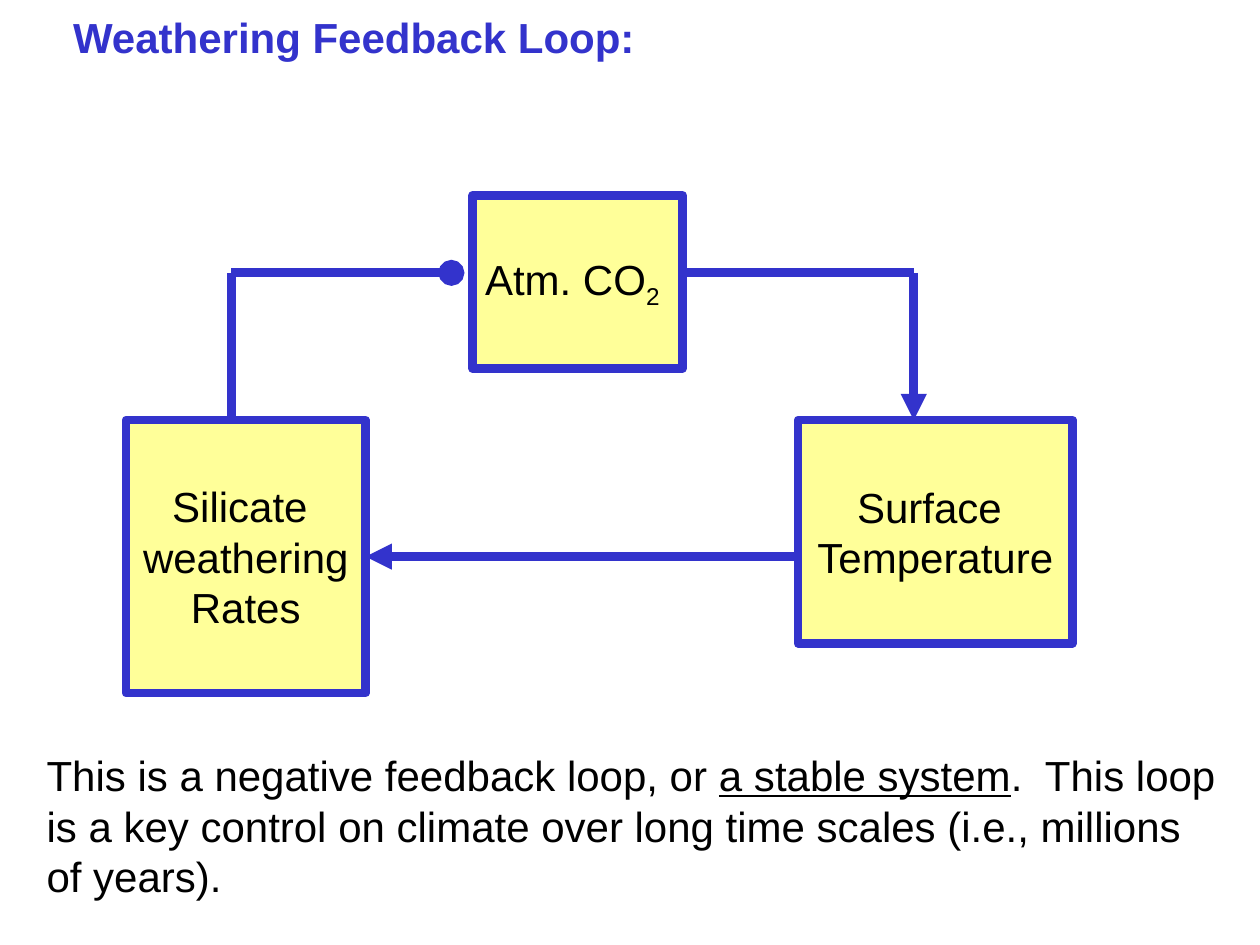
from dataclasses import dataclass

from lxml import etree
from pptx import Presentation
from pptx.dml.color import RGBColor
from pptx.enum.shapes import MSO_CONNECTOR, MSO_SHAPE
from pptx.enum.text import MSO_ANCHOR, MSO_AUTO_SIZE, PP_ALIGN
from pptx.oxml.ns import qn
from pptx.util import Cm, Pt

RECT = MSO_SHAPE.RECTANGLE
LINE = MSO_CONNECTOR.STRAIGHT
LEFT, CENTER = PP_ALIGN.LEFT, PP_ALIGN.CENTER
TOP, MIDDLE = MSO_ANCHOR.TOP, MSO_ANCHOR.MIDDLE
FIXED = MSO_AUTO_SIZE.NONE
RIGHT_SIDE = 3


@dataclass
class Theme:
    blue: RGBColor = RGBColor(0x33, 0x33, 0xCC)
    yellow: RGBColor = RGBColor(0xFF, 0xFF, 0x99)
    black: RGBColor = RGBColor(0, 0, 0)
    font: str = "Arial"
    size: Pt = Pt(24)
    stroke: Pt = Pt(5)


def write(frame, lines, theme, color=None, bold=False, align=LEFT, anchor=TOP):
    """Fill a frame; each line is a list of (text, style) runs."""
    frame.word_wrap = True
    frame.auto_size = FIXED
    frame.vertical_anchor = anchor
    for i, line in enumerate(lines):
        para = frame.add_paragraph() if i else frame.paragraphs[0]
        para.alignment = align
        for text, style in line:
            run = para.add_run()
            run.text = text
            font = run.font
            font.name, font.size, font.bold = theme.font, theme.size, bold
            font.color.rgb = color or theme.black
            if style == "under":
                font.underline = True
            elif style == "sub":
                font._element.set("baseline", "-25000")


class Page:
    def __init__(self, slide, theme):
        self.slide, self.theme = slide, theme

    def title(self, text, *area):
        shape = self.slide.shapes.title
        shape.left, shape.top, shape.width, shape.height = map(Cm, area)
        write(shape.text_frame, [[(text, "")]], self.theme,
              color=self.theme.blue, bold=True)

    def text(self, lines, *area):
        box = self.slide.shapes.add_textbox(*map(Cm, area))
        write(box.text_frame, lines, self.theme)

    def box(self, lines, *area, align=CENTER):
        shape = self.slide.shapes.add_shape(RECT, *map(Cm, area))
        shape.shadow.inherit = False
        shape.fill.solid()
        shape.fill.fore_color.rgb = self.theme.yellow
        shape.line.color.rgb = self.theme.blue
        shape.line.width = self.theme.stroke
        write(shape.text_frame, lines, self.theme, align=align, anchor=MIDDLE)
        return shape

    def link(self, *ends, tip=None):
        line = self.slide.shapes.add_connector(LINE, *map(Cm, ends))
        line.line.color.rgb = self.theme.blue
        line.line.width = self.theme.stroke
        if tip:
            etree.SubElement(line.line._get_or_add_ln(), qn("a:tailEnd"), type=tip)
        etree.SubElement(line._element.spPr, qn("a:effectLst"))
        return line


def main():
    deck = Presentation()
    deck.slide_width, deck.slide_height = Cm(25.4), Cm(19.05)
    page = Page(deck.slides.add_slide(deck.slide_layouts[5]), Theme())

    page.title("Weathering Feedback Loop:", 1.22, 0.1, 11.84, 1.27)

    # Stages of the loop
    page.box([[("Atm. CO", ""), ("2", "sub")]], 9.53, 3.94, 4.23, 3.49, align=LEFT)
    page.box([[("Surface ", "")], [("Temperature", "")]], 16.09, 8.47, 5.53, 4.5)
    rates = page.box([[("Silicate ", "")], [("weathering", "")], [("Rates", "")]],
                     2.54, 8.47, 4.83, 5.5)

    # Temperature drives weathering
    page.link(16.09, 11.22, 7.37, 11.22, tip="triangle").end_connect(rates, RIGHT_SIDE)

    # Weathering draws down the gas
    high, low = 5.5, 8.47
    page.link(4.66, low, 4.66, high)
    page.link(4.66, high, 9.1, high, tip="oval")

    # The gas warms the surface
    page.link(13.76, high, 18.42, high)
    page.link(18.42, high, 18.42, low, tip="triangle")

    # Conclusion
    page.text([[("This is a negative feedback loop, or ", ""),
                ("a stable system", "under"),
                (".  This loop is a key control on climate over long time scales "
                 "(i.e., millions of years).", "")]], 0.69, 14.99, 24.18, 3.3)

    deck.save("out.pptx")


if __name__ == "__main__":
    main()
